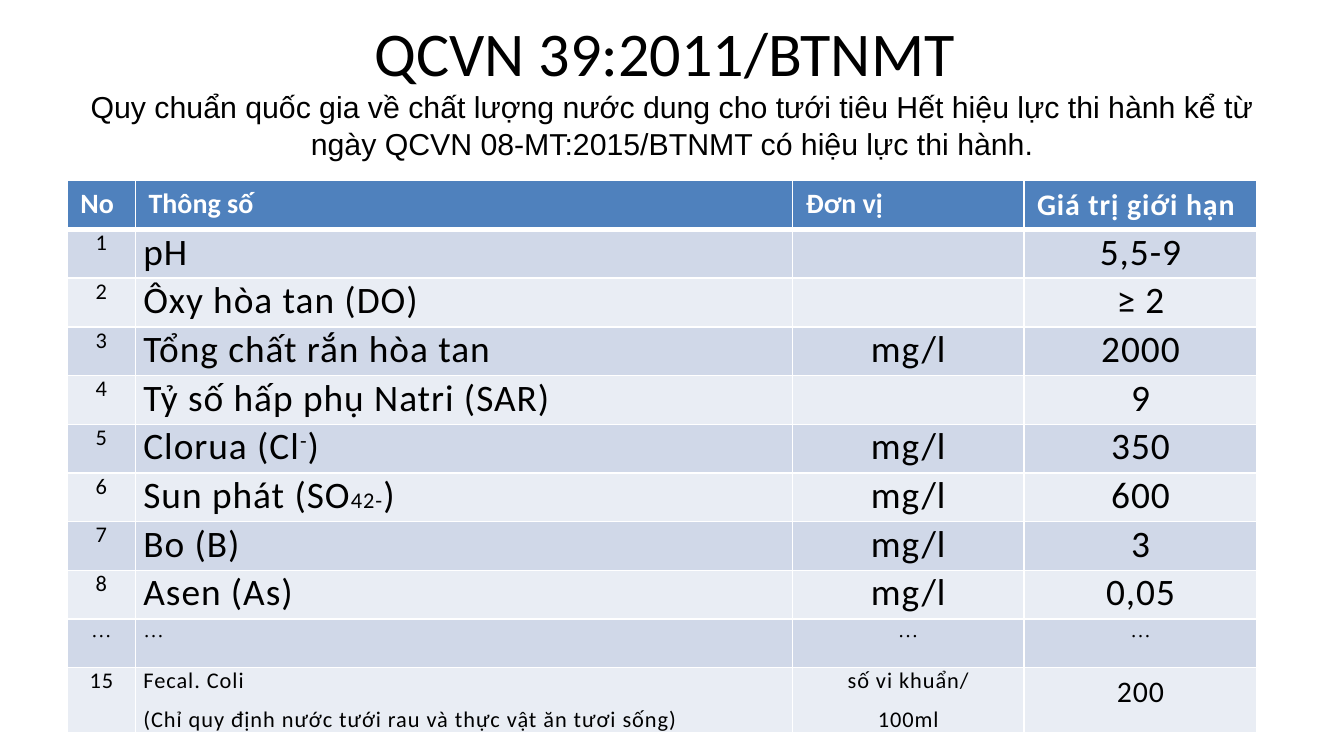
from lxml import etree
from pptx import Presentation
from pptx.dml.color import RGBColor
from pptx.enum.text import MSO_ANCHOR, PP_ALIGN
from pptx.oxml.ns import qn
from pptx.util import Cm, Pt

LEFT, CENTER, JUSTIFY = PP_ALIGN.LEFT, PP_ALIGN.CENTER, PP_ALIGN.JUSTIFY
MIDDLE = MSO_ANCHOR.MIDDLE

HEADER_FILL, BAND_FILLS = "4F81BD", ("D0D8E8", "E9EDF4")
WHITE, BLACK = "FFFFFF", "000000"

HEADERS = ["No", "Thông số", "Đơn vị", "Giá trị giới hạn"]
PARAMETERS = [
    ["1", "pH", "", "5,5-9"],
    ["2", "Ôxy hòa tan (DO)", "", "≥ 2"],
    ["3", "Tổng chất rắn hòa tan", "mg/l", "2000"],
    ["4", "Tỷ số hấp phụ Natri (SAR)", "", "9"],
    ["5", [("Clorua (Cl", {}), ("-", {"raised": 30}), (")", {})], "mg/l", "350"],
    ["6", [("Sun phát (SO", {}), ("42-", {"size": 12}), (")", {})], "mg/l", "600"],
    ["7", "Bo (B)", "mg/l", "3"],
    ["8", "Asen (As)", "mg/l", "0,05"],
    ["…", "…", "…", "…"],
    ["15", "Fecal. Coli\n(Chỉ quy định nước tưới rau và thực vật ăn tươi sống)",
     "số vi khuẩn/\n100ml", "200"],
]
COLUMN_WIDTHS = [1.29, 12.42, 4.37, 4.41]
HEADER_HEIGHT, ROW_HEIGHT, LAST_HEIGHT = 0.94, 0.92, 1.24


def color(hex_value):
    return RGBColor.from_string(hex_value)


def add_run(paragraph, text, size, font="Calibri", ink=BLACK, bold=False,
            spacing=0, raised=0):
    run = paragraph.add_run()
    run.text = text
    run.font.size = Pt(size)
    run.font.name = font
    run.font.bold = bold
    run.font.color.rgb = color(ink)
    properties = run._r.get_or_add_rPr()
    if spacing:
        properties.set("spc", str(int(spacing * 100)))
    if raised:
        properties.set("baseline", str(raised * 1000))


def set_borders(cell, bottom=1):
    properties = cell._tc.get_or_add_tcPr()
    for index, (side, width) in enumerate(
            [("lnL", 1), ("lnR", 1), ("lnT", 1), ("lnB", bottom)]):
        line = etree.Element(qn(f"a:{side}"), w=str(Pt(width)))
        fill = etree.SubElement(line, qn("a:solidFill"))
        etree.SubElement(fill, qn("a:srgbClr"), val=WHITE)
        properties.insert(index, line)


def fill_cell(cell, content, fill, align, insets, bottom=1, **style):
    cell.fill.solid()
    cell.fill.fore_color.rgb = color(fill)
    set_borders(cell, bottom)
    side, edge = insets
    cell.margin_left = cell.margin_right = Cm(side)
    cell.margin_top = cell.margin_bottom = Cm(edge)
    if not content:
        return
    lines = content.split("\n") if isinstance(content, str) else [content]
    for index, line in enumerate(lines):
        frame = cell.text_frame
        paragraph = frame.add_paragraph() if index else frame.paragraphs[0]
        paragraph.alignment = align
        if index:
            paragraph.space_before = Pt(6)
        runs = [(line, {})] if isinstance(line, str) else line
        for text, changes in runs:
            add_run(paragraph, text, **{**style, **changes})


def body_style(row, column):
    if row == len(PARAMETERS) - 2:
        return {"size": 11, "font": "Times New Roman"}
    if row == len(PARAMETERS) - 1:
        return {"size": 16 if column == 3 else 12, "spacing": 0.5}
    return {"size": 20 if column else 12, "spacing": 0.5}


def add_heading(slide, left, top, width, height):
    frame = slide.shapes.add_textbox(Cm(left), Cm(top), Cm(width), Cm(height)).text_frame
    frame.word_wrap = True
    frame.vertical_anchor = MIDDLE
    paragraph = frame.paragraphs[0]
    paragraph.alignment = CENTER
    add_run(paragraph, "QCVN 39:2011/BTNMT ", 33.3)
    paragraph.add_line_break()
    add_run(paragraph, "Quy chuẩn quốc gia về chất lượng nước dung cho tưới tiêu "
            "Hết hiệu lực thi hành kể từ ngày QCVN 08-MT:2015/BTNMT có hiệu lực "
            "thi hành.", 16.2, font="Arial")


def add_limits_table(slide, left, top, width, height):
    table = slide.shapes.add_table(len(PARAMETERS) + 1, len(HEADERS), Cm(left),
                                   Cm(top), Cm(width), Cm(height)).table
    for column, column_width in zip(table.columns, COLUMN_WIDTHS):
        column.width = Cm(column_width)
    heights = [HEADER_HEIGHT] + [ROW_HEIGHT] * (len(PARAMETERS) - 1) + [LAST_HEIGHT]
    for row, row_height in zip(table.rows, heights):
        row.height = Cm(row_height)

    # Header row
    for column, label in enumerate(HEADERS):
        size, spacing = (16, 0.5) if column == 3 else (15, 0)
        fill_cell(table.cell(0, column), label, HEADER_FILL, LEFT, (0.25, 0.13),
                  bottom=3, size=size, spacing=spacing, ink=WHITE, bold=True)

    # Banded parameter rows
    for row, parameter in enumerate(PARAMETERS):
        for column, content in enumerate(parameter):
            roomy = row == len(PARAMETERS) - 1 and column == 3
            fill_cell(table.cell(row + 1, column), content, BAND_FILLS[row % 2],
                      JUSTIFY if column == 1 else CENTER,
                      (0.25, 0.13) if roomy else (0.15, 0),
                      **body_style(row, column))


def main():
    presentation = Presentation()
    presentation.slide_width, presentation.slide_height = Cm(25.4), Cm(14.29)
    slide = presentation.slides.add_slide(presentation.slide_layouts[6])
    add_heading(slide, 1.27, 0.36, 22.86, 2.59)
    add_limits_table(slide, 1.27, 3.4, sum(COLUMN_WIDTHS), 10.46)
    presentation.save("out.pptx")


if __name__ == "__main__":
    main()
